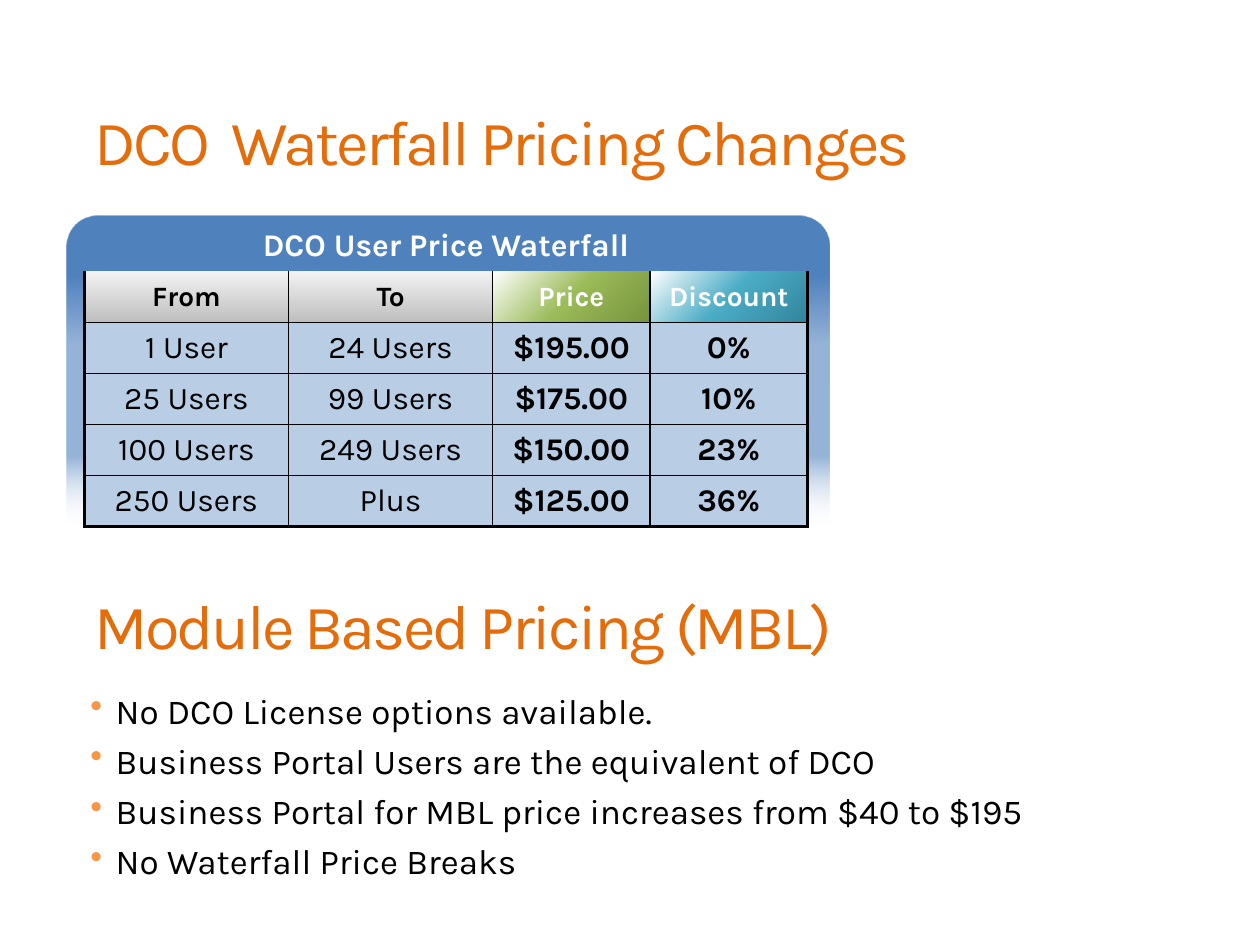
"""Build the DCO and module based pricing slide."""
import lxml.etree
import pptx
import pptx.dml.color
import pptx.enum.shapes
import pptx.enum.text
import pptx.oxml.ns
import pptx.util

Inches = pptx.util.Inches
Pt = pptx.util.Pt
qn = pptx.oxml.ns.qn


def color(hex_value):
    return pptx.dml.color.RGBColor.from_string(hex_value)


def write(paragraph, text, size=18, fill="000000", bold=False, align=None, tracking=None):
    run = paragraph.add_run()
    run.text = text
    run.font.name = "Karla"
    run.font.size = Pt(size)
    run.font.bold = bold
    run.font.color.rgb = color(fill)
    paragraph.alignment = align
    if tracking is not None:
        run.font._element.set("spc", str(int(tracking * 100)))


center = pptx.enum.text.PP_ALIGN.CENTER
presentation = pptx.Presentation()
presentation.slide_width = Inches(10)
presentation.slide_height = Inches(7.5)
slide = presentation.slides.add_slide(presentation.slide_layouts[6])

backdrop = slide.shapes.add_shape(
    pptx.enum.shapes.MSO_SHAPE.ROUND_2_SAME_RECTANGLE,
    Inches(0.53), Inches(1.71), Inches(6.05), Inches(2.48))
backdrop.adjustments[0] = 0.1
backdrop.adjustments[1] = 0
backdrop.shadow.inherit = False
backdrop.line.fill.background()
backdrop_stops = [(19, "4F81BD", 100), (41, "95B3D7", 100), (77, "95B3D7", 100), (100, "FFFFFF", 0)]
gradients = [(backdrop.fill, backdrop._element.spPr, 270, backdrop_stops)]

gray = (90, [(0, "BFBFBF", 100), (100, "F2F2F2", 100)])
green = (135, [(0, "77933C", 100), (50, "9BBB59", 100), (100, "FFFFFF", 100)])
teal = (135, [(0, "31859C", 100), (50, "4BACC6", 100), (100, "FFFFFF", 100)])
header_gradients = [gray, gray, green, teal]
header_inks = ["000000", "000000", "FFFFFF", "FFFFFF"]
price_rows = [
    ("DCO User Price Waterfall", "", "", ""),
    ("From", "To", "Price", "Discount"),
    ("1 User", "24 Users", "$195.00", "0%"),
    ("25 Users", "99 Users", "$175.00", "10%"),
    ("100 Users", "249 Users", "$150.00", "23%"),
    ("250 Users", "Plus", "$125.00", "36%"),
]
last_row = len(price_rows) - 1
waterfall = slide.shapes.add_table(
    len(price_rows), 4, Inches(0.67), Inches(1.75), Inches(5.75), Inches(2.43)).table
waterfall.first_row = False
waterfall.horz_banding = False
for column, width in zip(waterfall.columns, (1.62, 1.62, 1.25, 1.25)):
    column.width = Inches(width)
for row in waterfall.rows:
    row.height = Inches(2.43 / len(price_rows))
waterfall.cell(0, 0).merge(waterfall.cell(0, 3))

for r, labels in enumerate(price_rows):
    for c, label in enumerate(labels):
        cell = waterfall.cell(r, c)
        cell.vertical_anchor = pptx.enum.text.MSO_ANCHOR.MIDDLE
        borders = {
            "a:lnL": 1.5 if c == 0 else 1,
            "a:lnR": 1.5 if c == 3 else 1,
            "a:lnT": 1 if r > 1 else 0,
            "a:lnB": 1.5 if r == last_row else 1,
        }
        cell_properties = cell._tc.get_or_add_tcPr()
        for side, weight in borders.items():
            border = lxml.etree.SubElement(cell_properties, qn(side))
            if r == 0 or weight == 0:
                lxml.etree.SubElement(border, qn("a:noFill"))
                continue
            border.set("w", str(Pt(weight)))
            ink = lxml.etree.SubElement(border, qn("a:solidFill"))
            lxml.etree.SubElement(ink, qn("a:srgbClr"), val=str(color("000000")))
        if r == 0:
            cell.fill.background()
        elif r == 1:
            gradients.append((cell.fill, cell_properties, *header_gradients[c]))
        else:
            cell.fill.solid()
            cell.fill.fore_color.rgb = color("B9CDE5")
        if label:
            write(cell.text_frame.paragraphs[0], label,
                  size=16 if r == 1 else 18,
                  fill="FFFFFF" if r == 0 else header_inks[c] if r == 1 else "000000",
                  bold=r < 2 or c > 1, align=center)

for fill, properties, angle, stops in gradients:
    fill.gradient()
    fill.gradient_angle = angle
    stop_list = properties.find(".//" + qn("a:gsLst"))
    for old_stop in list(stop_list):
        stop_list.remove(old_stop)
    for position, hex_value, opacity in stops:
        stop = lxml.etree.SubElement(stop_list, qn("a:gs"), pos=str(position * 1000))
        tint = lxml.etree.SubElement(stop, qn("a:srgbClr"), val=str(color(hex_value)))
        if opacity < 100:
            lxml.etree.SubElement(tint, qn("a:alpha"), val=str(opacity * 1000))

for top, title in ((0.83, "DCO  Waterfall Pricing Changes"), (4.67, "Module Based Pricing (MBL)")):
    heading = slide.shapes.add_textbox(Inches(0.65), Inches(top), Inches(8.68), Inches(0.65)).text_frame
    heading.word_wrap = True
    heading.auto_size = pptx.enum.text.MSO_AUTO_SIZE.SHAPE_TO_FIT_TEXT
    heading.paragraphs[0].line_spacing = 0.9
    write(heading.paragraphs[0], title, size=36, fill="E46C0A", tracking=-1.5)

notes = [
    "No DCO License options available.",
    "Business Portal Users are the equivalent of DCO",
    "Business Portal for MBL price increases from $40 to $195",
    "No Waterfall Price Breaks",
]
pricing_notes = slide.shapes.add_textbox(
    Inches(0.58), Inches(5.42), Inches(8.66), Inches(1.95)).text_frame
pricing_notes.word_wrap = True
for i, note in enumerate(notes):
    paragraph = pricing_notes.add_paragraph() if i else pricing_notes.paragraphs[0]
    bullet_properties = paragraph._p.get_or_add_pPr()
    bullet_properties.set("marL", str(Inches(0.24)))
    bullet_properties.set("indent", str(Inches(-0.2)))
    bullet_color = lxml.etree.SubElement(bullet_properties, qn("a:buClr"))
    lxml.etree.SubElement(bullet_color, qn("a:srgbClr"), val=str(color("F79646")))
    lxml.etree.SubElement(bullet_properties, qn("a:buChar"), char="•")
    if i:
        paragraph.space_before = Pt(4.7)
    write(paragraph, note, size=20)

presentation.save("out.pptx")
